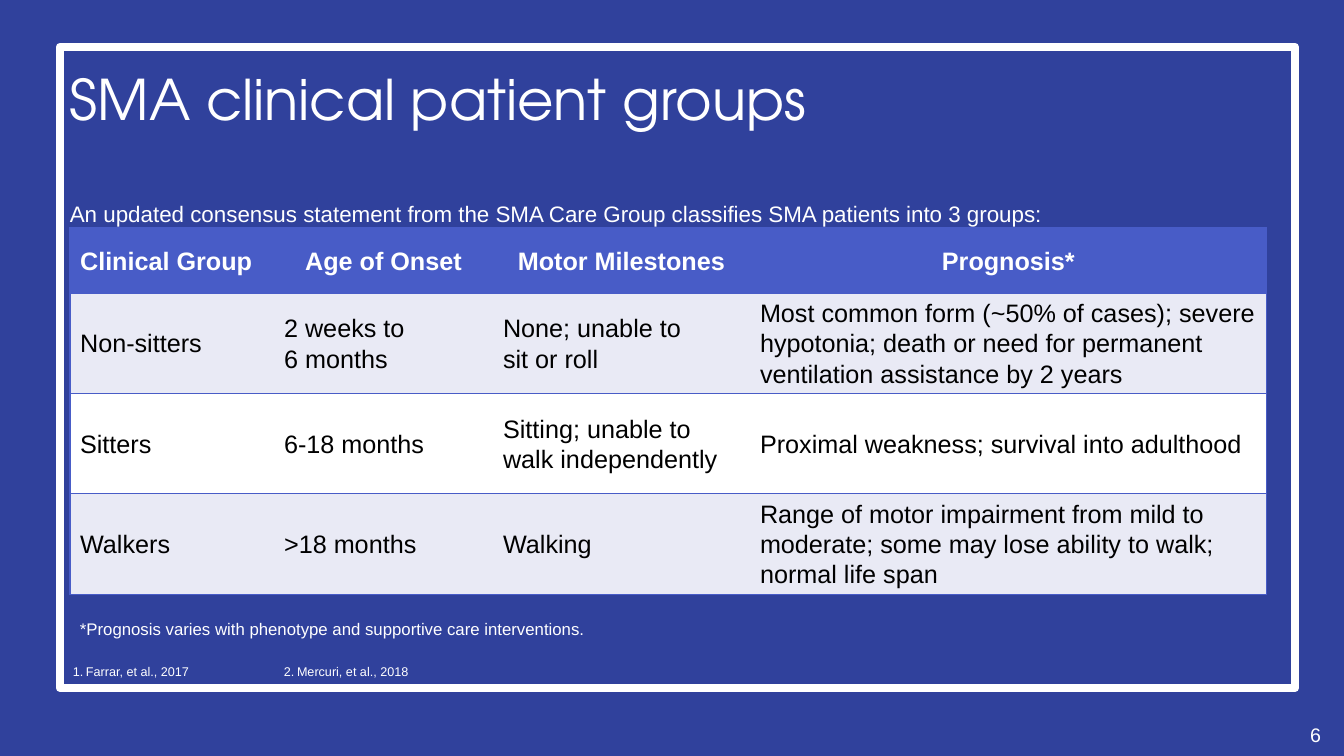
from lxml.etree import SubElement
from pptx import Presentation
from pptx.dml.color import RGBColor
from pptx.enum.shapes import MSO_SHAPE
from pptx.enum.text import MSO_ANCHOR, MSO_AUTO_SIZE, PP_ALIGN
from pptx.oxml.ns import qn
from pptx.util import Emu, Pt

WHITE, BLACK = "FFFFFF", "000000"
NAVY, BLUE, PALE = "30419C", "485CC7", "E9EAF5"
BODY_FONT, TITLE_FONT = "Arial", "TeX Gyre Adventor"

HEADERS = ["Clinical Group", "Age of Onset", "Motor Milestones", "Prognosis*"]
GROUPS = [
    ["Non-sitters", "2 weeks to\n6 months", "None; unable to\nsit or roll",
     "Most common form (~50% of cases); severe hypotonia; death or need for "
     "permanent ventilation assistance by 2 years"],
    ["Sitters", "6-18 months", "Sitting; unable to\nwalk independently",
     "Proximal weakness; survival into adulthood"],
    ["Walkers", ">18 months", "Walking",
     "Range of motor impairment from mild to moderate; some may lose ability "
     "to walk; normal life span"],
]
REFERENCES = ["Farrar, et al., 2017", "Mercuri, et al., 2018"]


def px(n):
    return Emu(round(n * 914400 / 100.8))


def rgb(value):
    return RGBColor.from_string(value)


class SlideBuilder:
    def __init__(self, prs):
        self.slide = prs.slides.add_slide(prs.slide_layouts[6])

    def background(self, color):
        fill = self.slide.background.fill
        fill.solid()
        fill.fore_color.rgb = rgb(color)

    def frame(self, x, y, w, h, color, weight):
        sp = self.slide.shapes.add_shape(
            MSO_SHAPE.RECTANGLE, px(x), px(y), px(w), px(h))
        sp.shadow.inherit = False
        sp.fill.background()
        sp.line.color.rgb = rgb(color)
        sp.line.width = Pt(weight)
        SubElement(sp.line._get_or_add_ln(), qn("a:round"))

    def runs(self, p, text, size, color=WHITE, font=BODY_FONT, bold=False):
        for i, line in enumerate(text.split("\n")):
            if i:
                p.add_line_break()
            r = p.add_run()
            r.text = line
            r.font.size = Pt(size)
            r.font.name = font
            r.font.bold = bold
            r.font.color.rgb = rgb(color)

    def text(self, x, y, w, h, lines, size, font=BODY_FONT, align=PP_ALIGN.LEFT,
             anchor=MSO_ANCHOR.TOP, grow=False, columns=1, numbered=False):
        box = self.slide.shapes.add_textbox(px(x), px(y), px(w), px(h))
        tf = box.text_frame
        tf.word_wrap = True
        tf.vertical_anchor = anchor
        tf.auto_size = MSO_AUTO_SIZE.SHAPE_TO_FIT_TEXT if grow else MSO_AUTO_SIZE.NONE
        if columns > 1:
            tf._txBody.bodyPr.set("numCol", str(columns))
        for i, line in enumerate(lines):
            p = tf.add_paragraph() if i else tf.paragraphs[0]
            p.alignment = align
            if numbered:
                self.number(p, 13)
            self.runs(p, line, size, font=font)

    def number(self, p, indent):
        pPr = p._p.get_or_add_pPr()
        pPr.set("marL", str(px(indent)))
        pPr.set("indent", str(-px(indent)))
        SubElement(pPr, qn("a:buFont"), typeface="+mj-lt")
        SubElement(pPr, qn("a:buAutoNum"), type="arabicPeriod")

    def borders(self, cell, visible):
        tcPr = cell._tc.get_or_add_tcPr()
        for side in "LRTB":
            ln = SubElement(tcPr, qn("a:ln" + side), w=str(Pt(1)))
            if side in visible:
                fill = SubElement(ln, qn("a:solidFill"))
                SubElement(fill, qn("a:srgbClr"), val=BLUE)
            else:
                SubElement(ln, qn("a:noFill"))

    def table(self, x, y, widths, heights, rows, size):
        table = self.slide.shapes.add_table(
            len(rows), len(widths), px(x), px(y),
            px(sum(widths)), px(sum(heights))).table
        for column, width in zip(table.columns, widths):
            column.width = px(width)
        for row, height in zip(table.rows, heights):
            row.height = px(height)
        last = len(widths) - 1
        for i, row in enumerate(rows):
            header = i == 0
            color = BLUE if header else PALE if i % 2 else WHITE
            for j, value in enumerate(row):
                cell = table.cell(i, j)
                self.borders(cell, "TB" + "L" * (j == 0) + "R" * (j == last))
                cell.fill.solid()
                cell.fill.fore_color.rgb = rgb(color)
                cell.vertical_anchor = MSO_ANCHOR.MIDDLE
                p = cell.text_frame.paragraphs[0]
                p.alignment = PP_ALIGN.CENTER if header and j else PP_ALIGN.LEFT
                p.line_spacing = 1.07
                self.runs(p, value, size, WHITE if header else BLACK, bold=header)


def main():
    prs = Presentation()
    prs.slide_width, prs.slide_height = px(1344), px(756)
    s = SlideBuilder(prs)

    # Background, frame and slide number
    s.background(NAVY)
    s.frame(60, 47, 1235, 641, WHITE, 6)
    s.text(1021, 718, 310, 24, ["6"], 14, align=PP_ALIGN.RIGHT)

    # Title and introduction
    s.text(60, 25, 1235, 146, ["SMA clinical patient groups"], 40,
           font=TITLE_FONT, anchor=MSO_ANCHOR.MIDDLE)
    s.text(60, 195, 1235, 494,
           ["An updated consensus statement from the SMA Care Group "
            "classifies SMA patients into 3 groups:"], 16)

    # Patient groups
    s.table(70, 228, [204, 219, 257, 517], [65, 100, 100, 100],
            [HEADERS] + GROUPS, 18)

    # Footnote and references
    s.text(70, 614, 681, 30,
           ["*Prognosis varies with phenotype and supportive care interventions."],
           12, grow=True)
    s.text(63, 659, 653, 25, REFERENCES, 9, grow=True, columns=3, numbered=True)

    prs.save("out.pptx")


if __name__ == "__main__":
    main()
